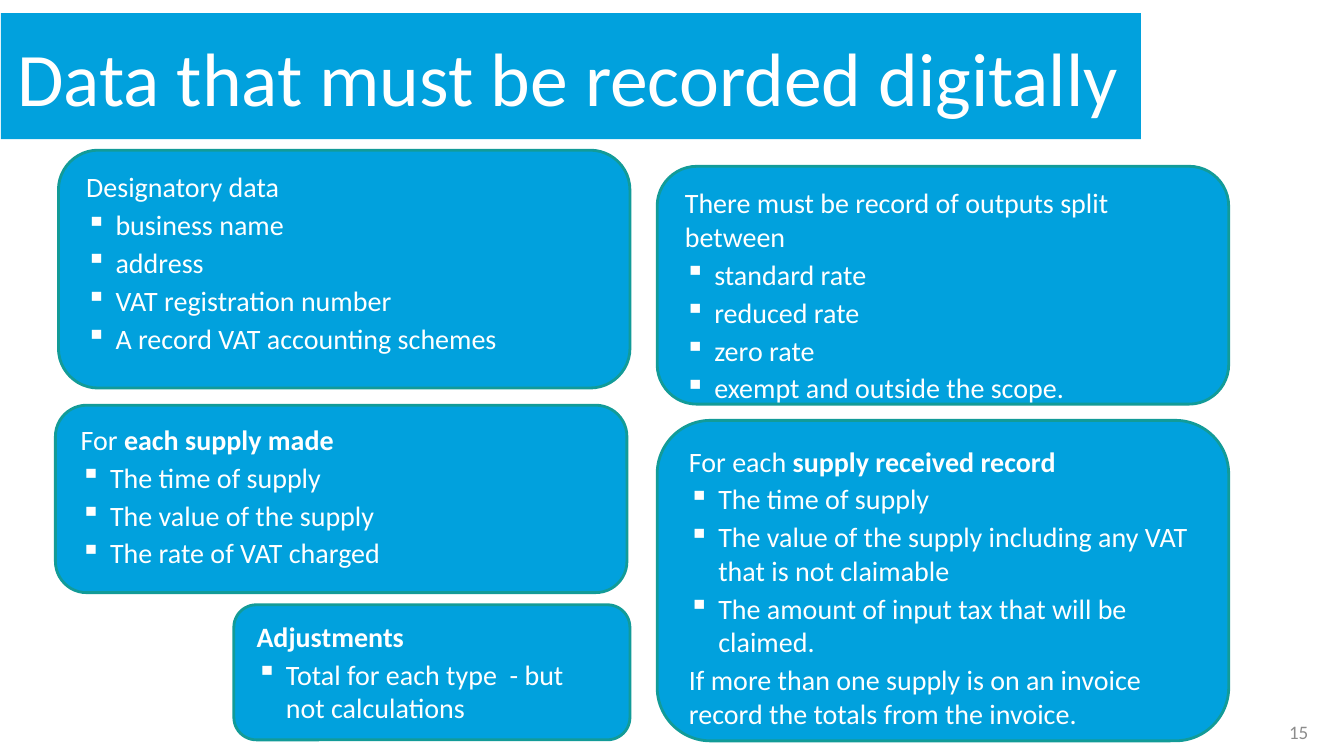
from dataclasses import dataclass

from lxml import etree
from pptx import Presentation
from pptx.dml.color import RGBColor
from pptx.enum import shapes, text
from pptx.oxml import ns
from pptx.util import Pt


@dataclass(frozen=True)
class Theme:
    font: str = "Calibri"
    panel: str = "01A1DD"
    outline: str = "129B98"
    light: str = "FFFFFF"
    muted: str = "8C8C8C"
    title_size: float = 54
    body_size: float = 20
    number_size: float = 13.6
    outline_width: float = 2
    indent: float = 21
    gap: float = 3


THEME = Theme()
PANEL_WIDTH = 408.24
RIGHT_COLUMN = 469.44

PANELS = [
    ((41.76, 107.28, PANEL_WIDTH, 169.92), "Designatory data", "",
     ["business name", "address", "VAT registration number",
      "A record VAT accounting schemes"], ""),
    ((39.6, 289.44, PANEL_WIDTH, 133.92), "For ", "each supply made",
     ["The time of supply", "The value of the supply", "The rate of VAT charged"], ""),
    ((RIGHT_COLUMN, 118.8, PANEL_WIDTH, 169.92),
     "There must be record of outputs split between", "",
     ["standard rate", "reduced rate", "zero rate", "exempt and outside the scope."], ""),
    ((RIGHT_COLUMN, 300.24, PANEL_WIDTH, 228.96), "For each ", "supply received record",
     ["The time of supply",
      "The value of the supply including any VAT that is not claimable",
      "The amount of input tax that will be claimed."],
     "If more than one supply is on an invoice record the totals from the invoice."),
    ((167.04, 432, 282.96, 96.48), "", "Adjustments",
     ["Total for each type  - but not calculations"], ""),
]


def color(value):
    return RGBColor.from_string(value)


def points(box):
    return [Pt(length) for length in box]


def fill(shape, value):
    shape.fill.solid()
    shape.fill.fore_color.rgb = color(value)


def set_frame(shape, anchor):
    frame = shape.text_frame
    frame.word_wrap = True
    frame.auto_size = text.MSO_AUTO_SIZE.NONE
    frame.vertical_anchor = anchor
    frame.margin_left = frame.margin_right = Pt(11.52)
    frame.margin_top = frame.margin_bottom = Pt(5.76)
    return frame


def style(paragraph, size, value, alignment=text.PP_ALIGN.LEFT):
    paragraph.alignment = alignment
    paragraph.font.name = THEME.font
    paragraph.font.size = Pt(size)
    paragraph.font.color.rgb = color(value)


def add_bullet(paragraph):
    properties = paragraph._p.get_or_add_pPr()
    properties.set("marL", str(Pt(THEME.indent)))
    properties.set("indent", str(-Pt(THEME.indent)))
    bullet_color = etree.SubElement(properties, ns.qn("a:buClr"))
    etree.SubElement(bullet_color, ns.qn("a:srgbClr"), val=THEME.light)
    etree.SubElement(properties, ns.qn("a:buChar"), char="▪")


def add_line(frame, wording, bullet=False):
    paragraph = frame.add_paragraph()
    paragraph.text = wording
    if bullet:
        add_bullet(paragraph)
    paragraph.space_before = Pt(THEME.gap)
    style(paragraph, THEME.body_size, THEME.light)


def add_heading(frame, plain, bold):
    paragraph = frame.paragraphs[0]
    for wording, is_bold in ((plain, False), (bold, True)):
        if wording:
            run = paragraph.add_run()
            run.text = wording
            run.font.bold = is_bold
    style(paragraph, THEME.body_size, THEME.light)


def add_panel(slide, box, plain, bold, items, closing):
    shape = slide.shapes.add_shape(shapes.MSO_SHAPE.ROUNDED_RECTANGLE, *points(box))
    shape.shadow.inherit = False
    fill(shape, THEME.panel)
    shape.line.color.rgb = color(THEME.outline)
    shape.line.width = Pt(THEME.outline_width)
    frame = set_frame(shape, text.MSO_ANCHOR.TOP)
    add_heading(frame, plain, bold)
    for item in items:
        add_line(frame, item, bullet=True)
    if closing:
        add_line(frame, closing)


def set_title(slide, wording, box):
    title = slide.shapes.title
    title.left, title.top, title.width, title.height = points(box)
    fill(title, THEME.panel)
    frame = set_frame(title, text.MSO_ANCHOR.MIDDLE)
    frame.text = wording
    style(frame.paragraphs[0], THEME.title_size, THEME.light)


def add_page_number(slide, number, box):
    shape = slide.shapes.add_textbox(*points(box))
    frame = set_frame(shape, text.MSO_ANCHOR.MIDDLE)
    frame.text = number
    style(frame.paragraphs[0], THEME.number_size, THEME.muted, text.PP_ALIGN.RIGHT)


def main():
    presentation = Presentation()
    presentation.slide_width, presentation.slide_height = Pt(960), Pt(540)
    slide = presentation.slides.add_slide(presentation.slide_layouts[5])
    set_title(slide, "Data that must be recorded digitally", (0.72, 9.36, 814.32, 90))
    for panel in PANELS:
        add_panel(slide, *panel)
    add_page_number(slide, "15", (722.16, 508.32, 223.92, 28.8))
    presentation.save("out.pptx")


if __name__ == "__main__":
    main()
